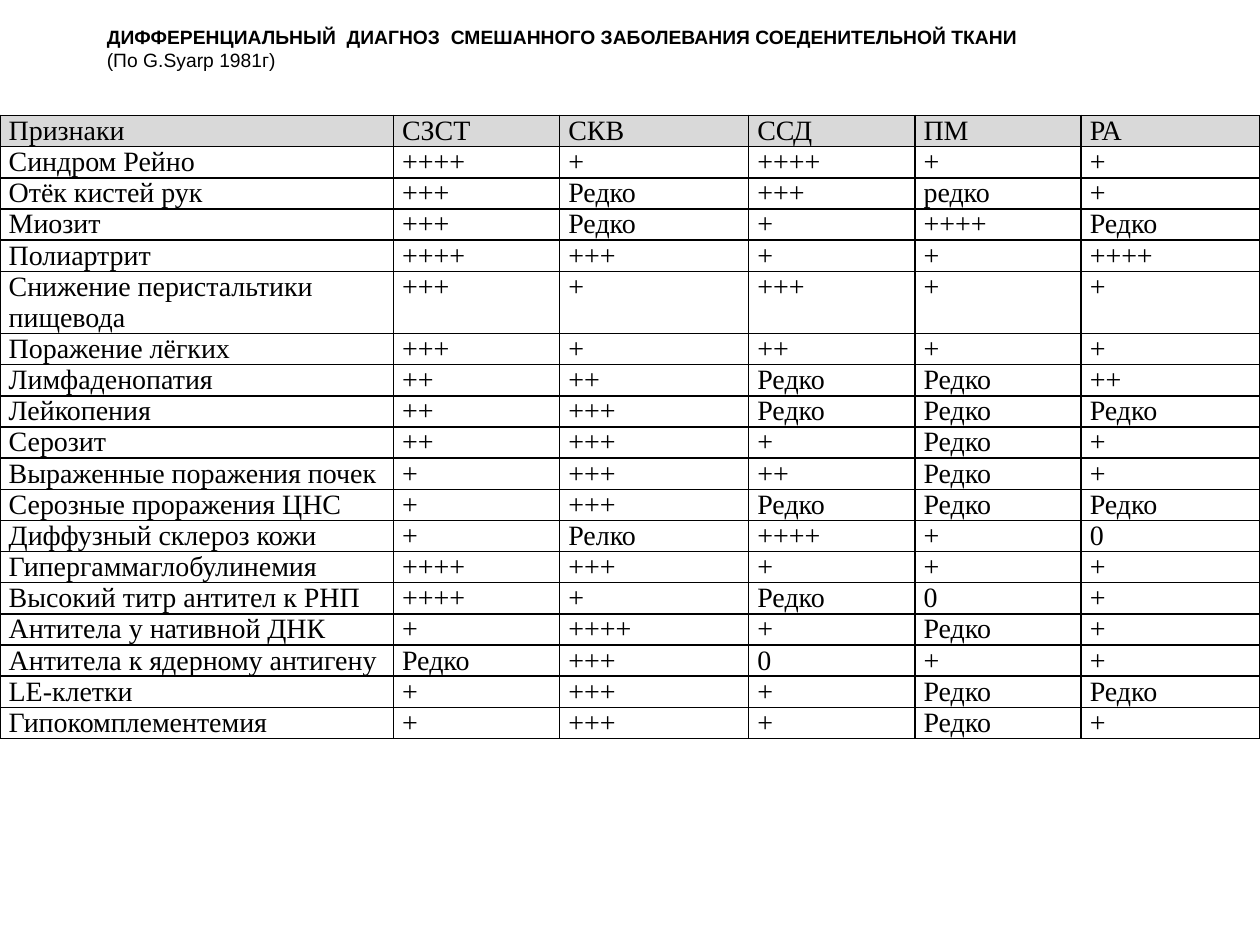
from lxml import etree
from pptx import Presentation
from pptx.dml.color import RGBColor
from pptx.enum.text import MSO_ANCHOR
from pptx.oxml.ns import qn
from pptx.util import Pt

TOP = MSO_ANCHOR.TOP
BLACK = "000000"
GREY = "D9D9D9"
TITLE = [
    "ДИФФЕРЕНЦИАЛЬНЫЙ  ДИАГНОЗ  СМЕШАННОГО ЗАБОЛЕВАНИЯ СОЕДЕНИТЕЛЬНОЙ ТКАНИ",
    "(По G.Syarp 1981г)",
]
WIDTHS = [224.8, 95, 108, 95, 95, 102.2]
ROW = 17.5
TALL = 5
SIGNS = [
    ["Признаки", "СЗСТ", "СКВ", "ССД", "ПМ", "РА"],
    ["Синдром Рейно", "++++", "+", "++++", "+", "+"],
    ["Отёк кистей рук", "+++", "Редко", "+++", "редко", "+"],
    ["Миозит", "+++", "Редко", "+", "++++", "Редко"],
    ["Полиартрит", "++++", "+++", "+", "+", "++++"],
    ["Снижение перистальтики пищевода", "+++", "+", "+++", "+", "+"],
    ["Поражение лёгких", "+++", "+", "++", "+", "+"],
    ["Лимфаденопатия", "++", "++", "Редко", "Редко", "++"],
    ["Лейкопения", "++", "+++", "Редко", "Редко", "Редко"],
    ["Серозит", "++", "+++", "+", "Редко", "+"],
    ["Выраженные поражения почек", "+", "+++", "++", "Редко", "+"],
    ["Серозные проражения ЦНС", "+", "+++", "Редко", "Редко", "Редко"],
    ["Диффузный склероз кожи", "+", "Релко", "++++", "+", "0"],
    ["Гипергаммаглобулинемия", "++++", "+++", "+", "+", "+"],
    ["Высокий титр антител к РНП", "++++", "+", "Редко", "0", "+"],
    ["Антитела у нативной ДНК", "+", "++++", "+", "Редко", "+"],
    ["Антитела к ядерному антигену", "Редко", "+++", "0", "+", "+"],
    ["LE-клетки", "+", "+++", "+", "Редко", "Редко"],
    ["Гипокомплементемия", "+", "+++", "+", "Редко", "+"],
]


def color(code):
    return RGBColor.from_string(code)


def style(para, face, size, bold=False):
    for run in para.runs:
        run.font.name = face
        run.font.size = Pt(size)
        run.font.bold = bold
        run.font.color.rgb = color(BLACK)


def add_title(slide):
    box = slide.shapes.add_textbox(Pt(54), Pt(10), Pt(612), Pt(55.5))
    frame = box.text_frame
    frame.word_wrap = True
    frame.vertical_anchor = TOP
    frame.margin_top = Pt(4.5)
    frame.text = "\n".join(TITLE)
    for i, para in enumerate(frame.paragraphs):
        style(para, "Arial", 11, i == 0)


def add_border(cell):
    props = cell._tc.get_or_add_tcPr()
    for side in ("a:lnL", "a:lnR", "a:lnT", "a:lnB"):
        line = etree.SubElement(props, qn(side), w=str(Pt(1)))
        fill = etree.SubElement(line, qn("a:solidFill"))
        etree.SubElement(fill, qn("a:srgbClr"), val=BLACK)


def fill_cell(cell, text, head):
    cell.text_frame.text = text
    cell.margin_left = cell.margin_right = Pt(5)
    cell.margin_top = cell.margin_bottom = 0
    para = cell.text_frame.paragraphs[0]
    para.space_before = para.space_after = Pt(2)
    style(para, "Times New Roman", 16)
    add_border(cell)
    if head:
        cell.fill.solid()
        cell.fill.fore_color.rgb = color(GREY)
    else:
        cell.fill.background()


def add_grid(slide):
    high = ROW * (len(SIGNS) + 1)
    frame = slide.shapes.add_table(
        len(SIGNS), len(WIDTHS), 0, Pt(66), Pt(sum(WIDTHS)), Pt(high))
    grid = frame.table
    grid.first_row = grid.horz_banding = False
    for col, width in zip(grid.columns, WIDTHS):
        col.width = Pt(width)
    for r, signs in enumerate(SIGNS):
        grid.rows[r].height = Pt(ROW * 2 if r == TALL else ROW)
        for c, text in enumerate(signs):
            fill_cell(grid.cell(r, c), text, r == 0)


def main():
    deck = Presentation()
    deck.slide_width = Pt(720)
    deck.slide_height = Pt(540)
    slide = deck.slides.add_slide(deck.slide_layouts[6])
    add_grid(slide)
    add_title(slide)
    deck.save("out.pptx")


if __name__ == "__main__":
    main()
